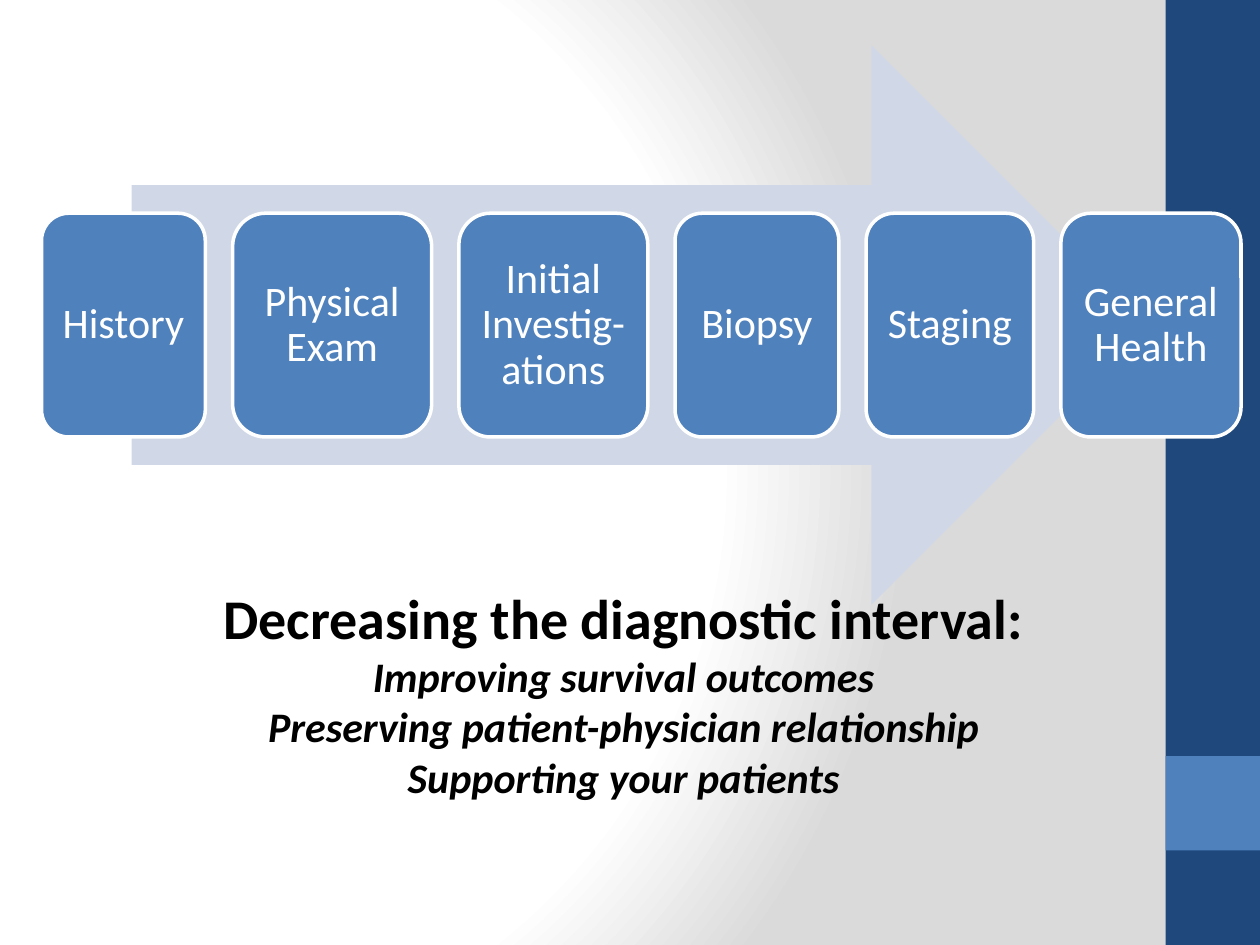
from dataclasses import dataclass

from lxml import etree
from pptx import Presentation
from pptx.dml.color import RGBColor
from pptx.enum.shapes import MSO_SHAPE
from pptx.enum.text import MSO_ANCHOR, MSO_AUTO_SIZE, PP_ALIGN
from pptx.util import Inches, Pt

RECT = MSO_SHAPE.RECTANGLE
ROUND = MSO_SHAPE.ROUNDED_RECTANGLE
ARROW = MSO_SHAPE.RIGHT_ARROW
MIDDLE = MSO_ANCHOR.MIDDLE
GROW = MSO_AUTO_SIZE.SHAPE_TO_FIT_TEXT
CENTER = PP_ALIGN.CENTER

WIDE, HIGH = 10, 7.5
NS = ('xmlns:a="http://schemas.openxmlformats.org/drawingml/2006/main" '
      'xmlns:p="http://schemas.openxmlformats.org/presentationml/2006/main"')


@dataclass(frozen=True)
class Theme:
    font: str = "Calibri"
    head: int = 32
    body: int = 24
    rim: int = 2
    white: str = "FFFFFF"
    black: str = "000000"
    gray: str = "DADADA"
    navy: str = "1F497D"
    blue: str = "4F81BD"
    pale: str = "D0D8E8"


THEME = Theme()

# Each stage with its width in inches
STAGES = [
    ("History", 1.3),
    ("Physical Exam", 1.58),
    ("Initial Investig-ations", 1.5),
    ("Biopsy", 1.3),
    ("Staging", 1.33),
    ("General Health", 1.43),
]
CLAIM = "Decreasing the diagnostic interval:"
GAINS = [
    "Improving survival outcomes",
    "Preserving patient-physician relationship",
    "Supporting your patients",
]


def apply(item, values):
    for name, value in values.items():
        setattr(item, name, value)


def style(font, size, color, **extra):
    apply(font, {"name": THEME.font, "size": Pt(size), **extra})
    font.color.rgb = RGBColor.from_string(color)


def add_block(slide, kind, box, color):
    block = slide.shapes.add_shape(kind, *map(Inches, box))
    block.shadow.inherit = False
    block.fill.solid()
    block.fill.fore_color.rgb = RGBColor.from_string(color)
    block.line.fill.background()
    return block


def add_glow(slide):
    """Fill the background with a circular fade from white to gray."""
    stops = [(0, THEME.white), (75, THEME.white), (100, THEME.gray)]
    marks = "".join(f'<a:gs pos="{at * 1000}"><a:srgbClr val="{color}"/></a:gs>'
                    for at, color in stops)
    root = slide.element.cSld
    root.insert(0, etree.fromstring(
        f'<p:bg {NS}><p:bgPr><a:gradFill rotWithShape="1"><a:gsLst>{marks}</a:gsLst>'
        '<a:path path="circle"><a:fillToRect l="20000" t="50000" r="100000" b="50000"/>'
        '</a:path></a:gradFill><a:effectLst/></p:bgPr></p:bg>'))


def add_band(slide, box):
    left, top, width, height = box
    add_block(slide, RECT, box, THEME.navy)
    add_block(slide, RECT, (left, top + 0.8 * height, width, 0.1 * height), THEME.blue)


def add_stage(slide, box, label):
    card = add_block(slide, ROUND, box, THEME.blue)
    card.line.color.rgb = RGBColor.from_string(THEME.white)
    card.line.width = Pt(THEME.rim)
    frame = card.text_frame
    sides = ("left", "top", "right", "bottom")
    apply(frame, {"word_wrap": True, "vertical_anchor": MIDDLE,
                  **{f"margin_{side}": Inches(0.1) for side in sides}})
    para = frame.paragraphs[0]
    apply(para, {"text": label, "alignment": CENTER, "line_spacing": 0.9})
    style(para.font, THEME.body, THEME.white)


def add_flow(slide, box):
    """Lay the stages over an arrow, with equal gaps across the box."""
    left, top, width, height = box
    add_block(slide, ARROW, (left + 0.075 * width, top, 0.85 * width, height), THEME.pale)
    gap = (width - sum(size for _, size in STAGES)) / (len(STAGES) - 1)
    spot = left
    for label, size in STAGES:
        add_stage(slide, (spot, top + 0.3 * height, size, 0.4 * height), label)
        spot += size + gap


def add_claim(slide, box):
    frame = slide.shapes.add_textbox(*map(Inches, box)).text_frame
    apply(frame, {"word_wrap": True, "auto_size": GROW})
    for row, text in enumerate([CLAIM, *GAINS]):
        para = frame.add_paragraph() if row else frame.paragraphs[0]
        apply(para, {"text": text, "alignment": CENTER})
        size = THEME.body if row else THEME.head
        style(para.font, size, THEME.black, bold=True, italic=row > 0)


def main():
    deck = Presentation()
    apply(deck, {"slide_width": Inches(WIDE), "slide_height": Inches(HIGH)})
    slide = deck.slides.add_slide(deck.slide_layouts[6])
    add_glow(slide)
    add_band(slide, (0.925 * WIDE, 0, 0.075 * WIDE, HIGH))
    add_flow(slide, (0.33, 0.36, 9.52, 4.44))
    add_claim(slide, (0.13 * WIDE, 4.58, 0.73 * WIDE, 2.26))
    deck.save("out.pptx")


if __name__ == "__main__":
    main()
